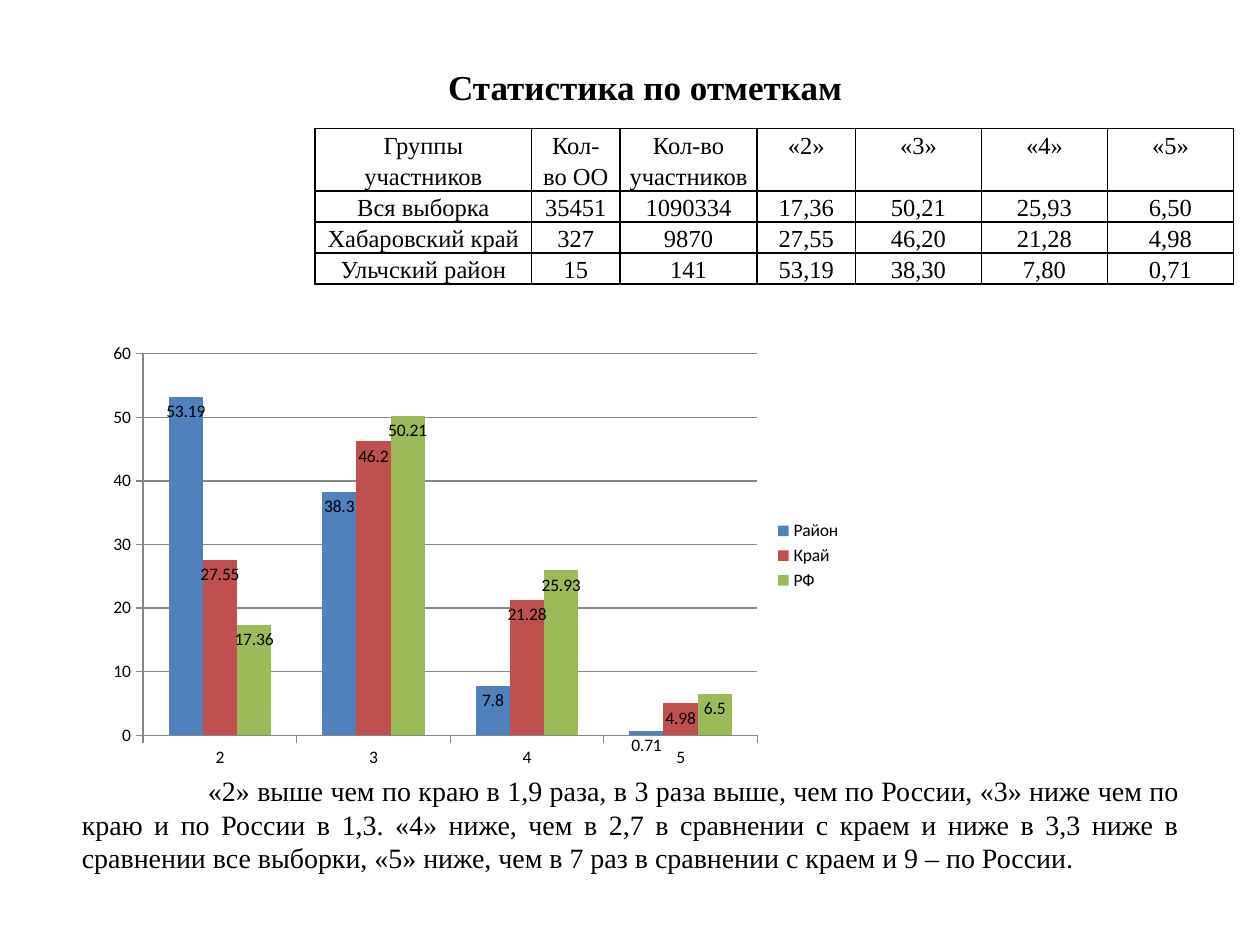
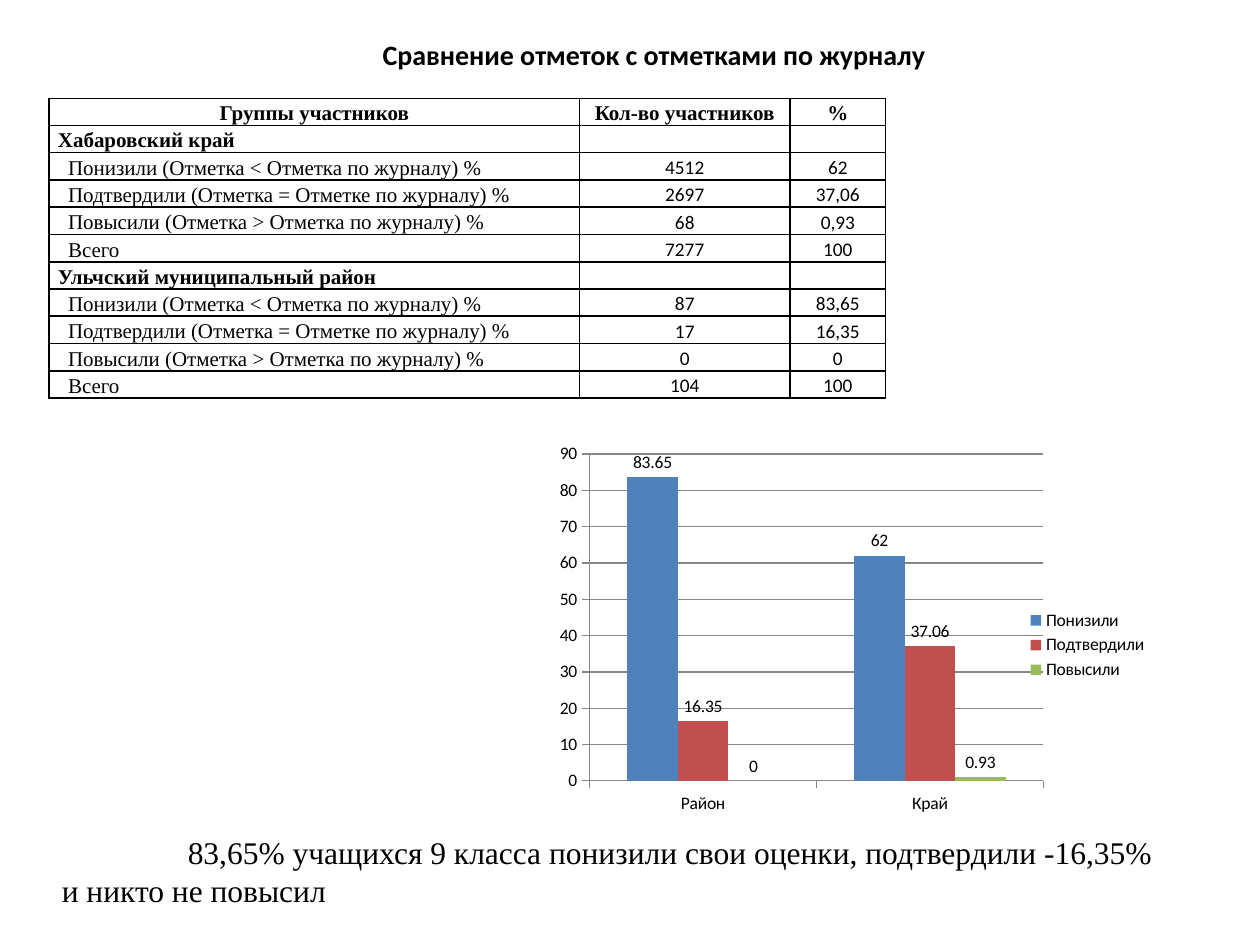
from dataclasses import dataclass

from lxml import etree
from pptx import Presentation
from pptx.chart.data import CategoryChartData
from pptx.dml.color import RGBColor
from pptx.enum.chart import XL_CHART_TYPE, XL_LABEL_POSITION, XL_LEGEND_POSITION, XL_TICK_MARK
from pptx.enum.text import MSO_ANCHOR, MSO_AUTO_SIZE, PP_ALIGN
from pptx.oxml import parse_xml
from pptx.oxml.ns import nsdecls, qn
from pptx.util import Inches, Pt

LEFT, MID, JUST = PP_ALIGN.LEFT, PP_ALIGN.CENTER, PP_ALIGN.JUSTIFY
TOP, CENTER, BASE = MSO_ANCHOR.TOP, MSO_ANCHOR.MIDDLE, MSO_ANCHOR.BOTTOM
BARS = XL_CHART_TYPE.COLUMN_CLUSTERED
IN_END, OUT_END = XL_LABEL_POSITION.INSIDE_END, XL_LABEL_POSITION.OUTSIDE_END
RIGHT = XL_LEGEND_POSITION.RIGHT
OUT = XL_TICK_MARK.OUTSIDE

COLS, ROWS = 100, 75


@dataclass(frozen=True)
class Theme:
    serif: str = "Times New Roman"
    sans: str = "Calibri"
    ink: str = "000000"
    grid: str = "868686"
    bars: tuple = ("4F81BD", "C0504D", "9BBB59")
    head: int = 20
    large: int = 18
    text: int = 16
    cell: int = 14
    small: int = 12
    count: int = 11
    label: int = 10


@dataclass
class Cell:
    text: str
    face: str
    size: int
    bold: bool = False
    align: int = MID
    inset: float = 0.07


class Deck:
    def __init__(self, theme):
        self.theme = theme
        self.show = Presentation()
        self.show.slide_width, self.show.slide_height = Inches(10), Inches(7.5)
        self.slide = None

    def start(self):
        self.slide = self.show.slides.add_slide(self.show.slide_layouts[1])

    def wide(self, cols):
        return int(self.show.slide_width * cols / COLS)

    def high(self, rows):
        return int(self.show.slide_height * rows / ROWS)

    def area(self, box):
        left, top, width, height = box
        return self.wide(left), self.high(top), self.wide(width), self.high(height)

    def style(self, font, face, size, bold=False):
        font.name, font.size, font.bold = face, Pt(size), bold
        font.color.rgb = RGBColor.from_string(self.theme.ink)

    def place(self, holder, box, anchor):
        holder.left, holder.top, holder.width, holder.height = self.area(box)
        frame = holder.text_frame
        frame.word_wrap, frame.auto_size = True, MSO_AUTO_SIZE.NONE
        frame.vertical_anchor = anchor
        return frame

    def title(self, text, box, face, size):
        frame = self.place(self.slide.shapes.title, box, CENTER)
        frame.text = text
        para = frame.paragraphs[0]
        para.alignment = MID
        self.style(para.font, face, size, True)

    def body(self, lines, box, size, align):
        frame = self.place(self.slide.placeholders[1], box, TOP)
        frame.text = "\n".join(lines)
        for spot, para in enumerate(frame.paragraphs):
            para.alignment, para.space_before = align, Pt(0)
            self.style(para.font, self.theme.serif, size)
            props = para._p.get_or_add_pPr()
            props.set("marL", "0")
            props.set("indent", str(0 if spot else self.wide(10)))
            props.insert_element_before(
                parse_xml(f"<a:buNone {nsdecls('a')}/>"), "a:tabLst", "a:defRPr", "a:extLst")

    def border(self, cell):
        props = cell._tc.get_or_add_tcPr()
        for side in ("lnL", "lnR", "lnT", "lnB"):
            line = etree.SubElement(props, qn("a:" + side), w=str(Pt(1)))
            fill = etree.SubElement(line, qn("a:solidFill"))
            etree.SubElement(fill, qn("a:srgbClr"), val=self.theme.ink)
        cell.fill.background()

    def fill(self, cell, item, anchor):
        cell.margin_left, cell.margin_right = Inches(item.inset), Inches(0.07)
        cell.margin_top = cell.margin_bottom = 0
        cell.vertical_anchor = anchor
        cell.text = item.text
        para = cell.text_frame.paragraphs[0]
        para.alignment, para.line_spacing = item.align, 1.15
        self.style(para.font, item.face, item.size, item.bold)
        if not item.text:
            para._p.get_or_add_endParaRPr().set("sz", str(item.size * 100))
        self.border(cell)

    def table(self, rows, left, top, widths, heights, anchor):
        box = self.area((left, top, sum(widths), sum(heights)))
        table = self.slide.shapes.add_table(len(rows), len(widths), *box).table
        table.first_row = table.horz_banding = False
        for col, width in zip(table.columns, widths):
            col.width = self.wide(width)
        for row, height, items in zip(table.rows, heights, rows):
            row.height = self.high(height)
            for cell, item in zip(row.cells, items):
                self.fill(cell, item, anchor)

    def chart(self, names, sets, box, spot, frame=None):
        data = CategoryChartData()
        data.categories = names
        for name, values in sets.items():
            data.add_series(name, values)
        chart = self.slide.shapes.add_chart(BARS, *self.area(box), data).chart
        self.style(chart.font, self.theme.sans, self.theme.label)
        chart.has_title, chart.has_legend = False, True
        chart.legend.position, chart.legend.include_in_layout = RIGHT, False
        grey = RGBColor.from_string(self.theme.grid)
        chart.value_axis.has_major_gridlines = True
        lines = [chart.value_axis.major_gridlines.format.line]
        for axis in (chart.category_axis, chart.value_axis):
            axis.major_tick_mark = OUT
            lines.append(axis.format.line)
        for line in lines:
            line.color.rgb, line.width = grey, Pt(0.75)
        plot = chart.plots[0]
        plot.gap_width, plot.overlap, plot.vary_by_categories = 150, 0, False
        for series, tint in zip(plot.series, self.theme.bars):
            series.format.fill.solid()
            series.format.fill.fore_color.rgb = RGBColor.from_string(tint)
            labels = series.data_labels
            labels.show_value, labels.position = True, spot
        if frame:
            self.layout(chart, frame)

    def layout(self, chart, frame):
        area = chart._chartSpace.chart.plotArea
        for old in area.findall(qn("c:layout")):
            area.remove(old)
        layout = parse_xml(f"<c:layout {nsdecls('c')}/>")
        manual = etree.SubElement(layout, qn("c:manualLayout"))
        parts = [("layoutTarget", "inner"), ("xMode", "edge"), ("yMode", "edge")]
        parts += zip("xywh", frame)
        for tag, value in parts:
            etree.SubElement(manual, qn("c:" + tag), val=str(value))
        area.insert(0, layout)


def marks(deck):
    theme = deck.theme
    deck.start()
    deck.title("Статистика по отметкам", (30.5, 4.7, 41.4, 4.4), theme.serif, theme.head)
    rows = [
        ("Группы участников", "Кол-во ОО", "Кол-во участников", "«2»", "«3»", "«4»", "«5»"),
        ("Вся выборка", "35451", "1090334", "17,36", "50,21", "25,93", "6,50"),
        ("Хабаровский край", "327", "9870", "27,55", "46,20", "21,28", "4,98"),
        ("Ульчский район", "15", "141", "53,19", "38,30", "7,80", "0,71"),
    ]
    cells = [[Cell(text, theme.serif, theme.cell) for text in row] for row in rows]
    deck.table(cells, 25, 10.2, (17.2, 7, 10.9, 7.8, 10, 10, 10), [4.9] + [2.4] * 3, TOP)
    deck.chart(
        ("2", "3", "4", "5"),
        {"Район": (53.19, 38.3, 7.8, 0.71),
         "Край": (27.55, 46.2, 21.28, 4.98),
         "РФ": (17.36, 50.21, 25.93, 6.5)},
        (7.8, 26.6, 60, 35), IN_END)
    deck.body(
        ["«2» выше чем по краю в 1,9 раза, в 3 раза выше, чем по России, «3» ниже чем по краю "
         "и по России в 1,3. «4» ниже, чем в 2,7 в сравнении с краем и ниже в 3,3 ниже в "
         "сравнении все выборки, «5» ниже, чем в 7 раз в сравнении с краем и 9 – по России."],
        (5.5, 60.9, 89.1, 9.1), theme.text, JUST)


def journal(deck):
    theme = deck.theme
    deck.start()
    deck.title("Сравнение отметок с отметками по журналу", (23.4, 2.3, 57, 4),
               theme.sans, theme.text)
    kinds = ("Понизили (Отметка < Отметка по журналу) %",
             "Подтвердили (Отметка = Отметке по журналу) %",
             "Повысили (Отметка > Отметка по журналу) %",
             "Всего")
    groups = {
        "Хабаровский край": (("4512", "62"), ("2697", "37,06"), ("68", "0,93"), ("7277", "100")),
        "Ульчский муниципальный район":
            (("87", "83,65"), ("17", "16,35"), ("0", "0"), ("104", "100")),
    }
    heads = ("Группы участников", "Кол-во участников", "%")
    rows = [[Cell(text, theme.serif, theme.small, True) for text in heads]]
    for group, pairs in groups.items():
        blank = Cell("", theme.sans, theme.count)
        rows.append([Cell(group, theme.serif, theme.small, True, LEFT), blank, blank])
        for kind, pair in zip(kinds, pairs):
            first = Cell(kind, theme.serif, theme.small, False, LEFT, 0.15)
            rows.append([first] + [Cell(text, theme.sans, theme.count) for text in pair])
    deck.table(rows, 3.9, 7.8, (42.1, 16.7, 7.6), [2.15] * len(rows), BASE)
    deck.chart(
        ("Район", "Край"),
        {"Понизили": (83.65, 62), "Подтвердили": (16.35, 37.06), "Повысили": (0, 0.93)},
        (39.1, 35.2, 53, 32), OUT_END, (0.145, 0.026, 0.68, 0.811))
    deck.body(
        ["83,65% учащихся 9 класса понизили свои оценки, подтвердили -16,35%",
         "и никто не повысил"],
        (3.9, 65.6, 93.8, 7.1), theme.large, LEFT)


def main():
    deck = Deck(Theme())
    marks(deck)
    journal(deck)
    deck.show.save("out.pptx")


if __name__ == "__main__":
    main()
